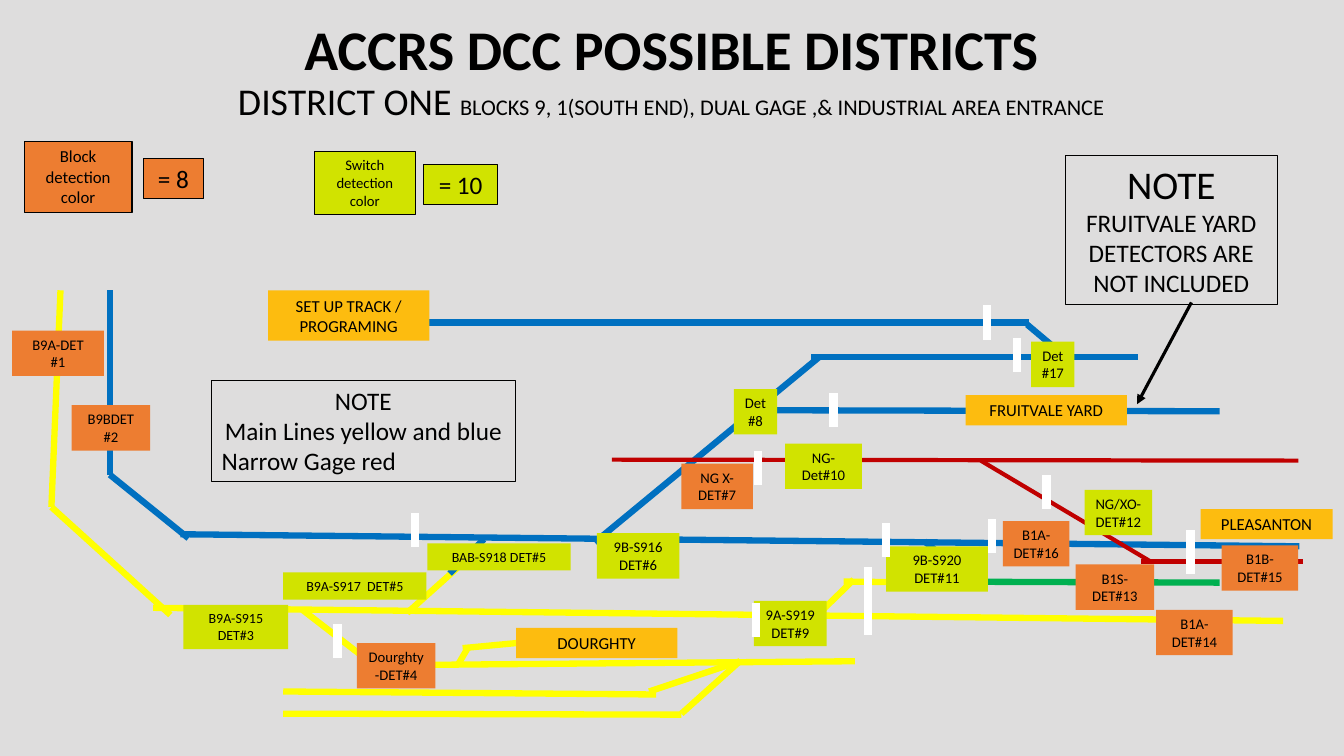
from dataclasses import dataclass
from typing import NamedTuple, Optional

from lxml.etree import SubElement
from pptx import Presentation
from pptx.dml.color import RGBColor
from pptx.enum.shapes import MSO_CONNECTOR, MSO_SHAPE
from pptx.enum.text import MSO_ANCHOR, MSO_AUTO_SIZE, PP_ALIGN
from pptx.oxml.ns import qn
from pptx.util import Inches, Pt

BLACK = RGBColor(0x00, 0x00, 0x00)
WHITE = RGBColor(0xFF, 0xFF, 0xFF)
GREY = RGBColor(0xDE, 0xDD, 0xDD)
BLUE = RGBColor(0x00, 0x70, 0xC0)
RED = RGBColor(0xC0, 0x00, 0x00)
YELLOW = RGBColor(0xFF, 0xFF, 0x00)
GREEN = RGBColor(0x00, 0xB0, 0x50)
AMBER = RGBColor(0xFD, 0xBC, 0x0F)
ORANGE = RGBColor(0xED, 0x7D, 0x31)
LIME = RGBColor(0xD1, 0xE3, 0x00)

CELL = Inches(0.1)
COLS, ROWS = 133.33, 75
FONT = {"name": "Calibri", "bold": False}


@dataclass(frozen=True)
class Look:
    fill: Optional[RGBColor]
    size: float
    edge: bool = False
    head: Optional[float] = None
    last: PP_ALIGN = PP_ALIGN.CENTER


class Box(NamedTuple):
    text: str
    col: float
    row: float
    wide: float
    high: float
    look: Look


class Track(NamedTuple):
    col: float
    row: float
    end_col: float
    end_row: float
    stop: str = ""


class Gap(NamedTuple):
    col: float
    row: float
    high: float = 3.4


SIGN = Look(AMBER, 12)
BLOCK = Look(ORANGE, 10.5)
SWITCH = Look(LIME, 10.5)
SMALL = Look(LIME, 10)

TRACKS = [
    (YELLOW, 4.5, [
        Track(83.7, 57.7, 93.7, 57.8), Track(28.1, 68.6, 65.1, 68.9),
        Track(15.2, 60.3, 127.3, 61.6), Track(6, 28.8, 5.1, 50.3),
        Track(16.9, 61, 5.1, 50.3), Track(37.5, 66.3, 30, 60.5),
        Track(45.9, 64.3, 51.2, 64.1, "DOURGHTY"), Track(67.6, 70.8, 73.4, 65.6),
        Track(37.5, 66, 84.8, 65.6), Track(28.1, 70.8, 67.6, 70.9),
        Track(64.4, 68.6, 73.4, 65.6), Track(40.4, 60.8, 46.2, 55.6),
        Track(80.8, 61.3, 84.7, 57.5), Track(45.4, 66, 46.4, 64.3)]),
    (BLUE, 4.5, [
        Track(17.9, 53, 128.9, 54.2), Track(80.5, 35.4, 112.9, 35.4),
        Track(44.6, 56.9, 48, 53.5), Track(18.7, 53.4, 10.9, 47.1),
        Track(10.9, 47.1, 10.9, 28.8), Track(96.4, 57.5, 91.7, 53.7),
        Track(59, 53.8, 81.3, 35.4), Track(75.2, 40.7, 121, 40.8),
        Track(42.6, 32, 102.1, 32), Track(105.7, 35.4, 101.9, 32.2)]),
    (RED, 3, [
        Track(97.3, 45.7, 114.3, 55.8), Track(60.7, 45.6, 128.8, 45.7),
        Track(113.2, 55.7, 129.3, 55.7)]),
    (GREEN, 4.5, [Track(91.1, 57.7, 121, 57.8)]),
]

BOXES = [
    Box("DOURGHTY", 51.2, 62.3, 16, 3, SIGN),
    Box("PLEASANTON", 119.1, 50.5, 13.1, 3, SIGN),
    Box("FRUITVALE YARD", 95.8, 39.2, 16, 3, SIGN),
    Box("SET UP TRACK / PROGRAMING", 26.6, 28.8, 16, 5, SIGN),
    Box("B9A-DET\n#1", 1.2, 32.8, 9.1, 4.5, BLOCK),
    Box("B9BDET\n#2", 7.1, 40.2, 7.8, 4.5, BLOCK),
    Box("B9A-S915 DET#3", 18.2, 60, 10.4, 4.4, SMALL),
    Box("Dourghty-DET#4", 35.4, 63.8, 7.8, 4.5, BLOCK),
    Box("B9A-S917  DET#5", 28.1, 56.8, 14.2, 2.7, SMALL),
    Box("BAB-S918 DET#5", 42.4, 53.9, 14.2, 2.7, SMALL),
    Box("9B-S916 DET#6", 59.2, 52.9, 8.2, 4.5, SWITCH),
    Box("NG X-DET#7", 67.6, 46, 7.1, 4.5, BLOCK),
    Box("Det#8", 72.8, 38.6, 4.3, 4.5, SWITCH),
    Box("9A-S919\nDET#9", 74.8, 59.6, 7.2, 4.5, SWITCH),
    Box("NG-Det#10", 77.9, 44, 7.6, 4.5, SWITCH),
    Box("9B-S920 DET#11", 87.9, 54.2, 10.1, 4.5, SWITCH),
    Box("NG/XO-DET#12", 107.6, 48.6, 6.7, 4.5, SWITCH),
    Box("B1S-DET#13", 106.7, 56, 7.8, 4.5, BLOCK),
    Box("B1A-DET#14", 114.7, 60.5, 7.6, 4.5, BLOCK),
    Box("B1B-DET#15", 121.2, 54.1, 7.6, 4.5, BLOCK),
    Box("B1A-DET#16", 99.5, 51.7, 6.6, 4.5, BLOCK),
    Box("Det#17", 102.3, 33.9, 4.3, 4.5, SWITCH),
    Box("Block detection\ncolor", 2.4, 14, 10.7, 7.1, Look(ORANGE, 12, True)),
    Box("= 8", 14.2, 15.7, 6, 4, Look(ORANGE, 18, True)),
    Box("Switch detection\ncolor", 31.2, 15, 10, 6.3, Look(LIME, 10.5, True)),
    Box("= 10", 42, 16.3, 7.4, 4, Look(LIME, 18, True)),
    Box("NOTE\nMain Lines yellow and blue\nNarrow Gage red", 21, 37.7, 30.1, 10.1,
        Look(None, 18, True, last=PP_ALIGN.LEFT)),
    Box("NOTE\nFRUITVALE YARD\nDETECTORS ARE NOT INCLUDED", 105.7, 15.4, 21, 14.8,
        Look(None, 18, True, head=28)),
]

GAPS = [
    Gap(41.2, 50.9), Gap(75.2, 44.7), Gap(86.1, 56.3), Gap(86.1, 59.6),
    Gap(87.9, 51.9), Gap(98.4, 51.5), Gap(33.5, 61.9), Gap(82.7, 39),
    Gap(100.9, 33.5), Gap(97.9, 30.3), Gap(118.1, 52.6, 4.3),
    Gap(103.8, 47.1), Gap(75, 59.8),
]

HEADS = [
    ("ACCRS DCC POSSIBLE DISTRICTS", 40, True),
    ("DISTRICT ONE ", 27, False),
    ("BLOCKS 9, 1(SOUTH END), DUAL GAGE ,& INDUSTRIAL AREA ENTRANCE", 16, False),
]


def grid(*cells: float) -> list[int]:
    return [round(cell * CELL) for cell in cells]


def style(item, **values) -> None:
    for key, value in values.items():
        setattr(item, key, value)


def write(para, text: str, size: float, bold: bool = False) -> None:
    run = para.add_run()
    run.text = text
    style(run.font, **{**FONT, "size": Pt(size), "bold": bold})
    run.font.color.rgb = BLACK


def draw_title(slide) -> None:
    title = slide.shapes.title
    left, top, width, height = grid(9.1, 1.2, 115, 14.5)
    style(title, left=left, top=top, width=width, height=height)
    frame = title.text_frame
    style(frame, word_wrap=True, auto_size=MSO_AUTO_SIZE.NONE,
          vertical_anchor=MSO_ANCHOR.TOP, margin_top=Inches(0.1))
    para = frame.paragraphs[0]
    style(para, alignment=PP_ALIGN.CENTER, line_spacing=0.9)
    for text, size, bold in HEADS:
        write(para, text, size, bold)
        if bold:
            para.add_line_break()


def draw_line(slide, ends: tuple, tint: RGBColor, width: float, arrow: bool = False):
    line = slide.shapes.add_connector(MSO_CONNECTOR.STRAIGHT, *grid(*ends))
    line.line.color.rgb = tint
    line.line.width = Pt(width)
    props = line._element.spPr
    if arrow:
        SubElement(props.find(qn("a:ln")), qn("a:tailEnd"), type="triangle")
    SubElement(props, qn("a:effectLst"))
    return line


def draw_box(slide, box: Box):
    look = box.look
    shape = slide.shapes.add_shape(MSO_SHAPE.RECTANGLE, *grid(*box[1:5]))
    shape.shadow.inherit = False
    if look.fill is None:
        shape.fill.background()
    else:
        shape.fill.solid()
        shape.fill.fore_color.rgb = look.fill
    if look.edge:
        shape.line.color.rgb = BLACK
        shape.line.width = Pt(0.75)
    else:
        shape.line.fill.background()
    frame = shape.text_frame
    style(frame, word_wrap=True, auto_size=MSO_AUTO_SIZE.SHAPE_TO_FIT_TEXT,
          vertical_anchor=MSO_ANCHOR.TOP)
    for rank, text in enumerate(box.text.split("\n")):
        para = frame.add_paragraph() if rank else frame.paragraphs[0]
        para.alignment = PP_ALIGN.CENTER
        write(para, text, look.head if look.head and not rank else look.size)
    para.alignment = look.last
    return shape


def main() -> None:
    deck = Presentation()
    style(deck, slide_width=grid(COLS)[0], slide_height=grid(ROWS)[0])
    slide = deck.slides.add_slide(deck.slide_layouts[5])
    slide.background.fill.solid()
    slide.background.fill.fore_color.rgb = GREY
    draw_title(slide)
    joins = []
    for tint, width, tracks in TRACKS:
        for track in tracks:
            line = draw_line(slide, track[:4], tint, width)
            if track.stop:
                joins.append((line, track.stop))
    shapes = {box.text: draw_box(slide, box) for box in BOXES}
    for line, stop in joins:
        line.end_connect(shapes[stop], 1)
    for gap in GAPS:
        draw_line(slide, (gap.col, gap.row, gap.col, gap.row + gap.high), WHITE, 6)
    draw_line(slide, (118.2, 30, 112.8, 40.1), BLACK, 2.25, arrow=True)
    deck.save("out.pptx")


if __name__ == "__main__":
    main()
